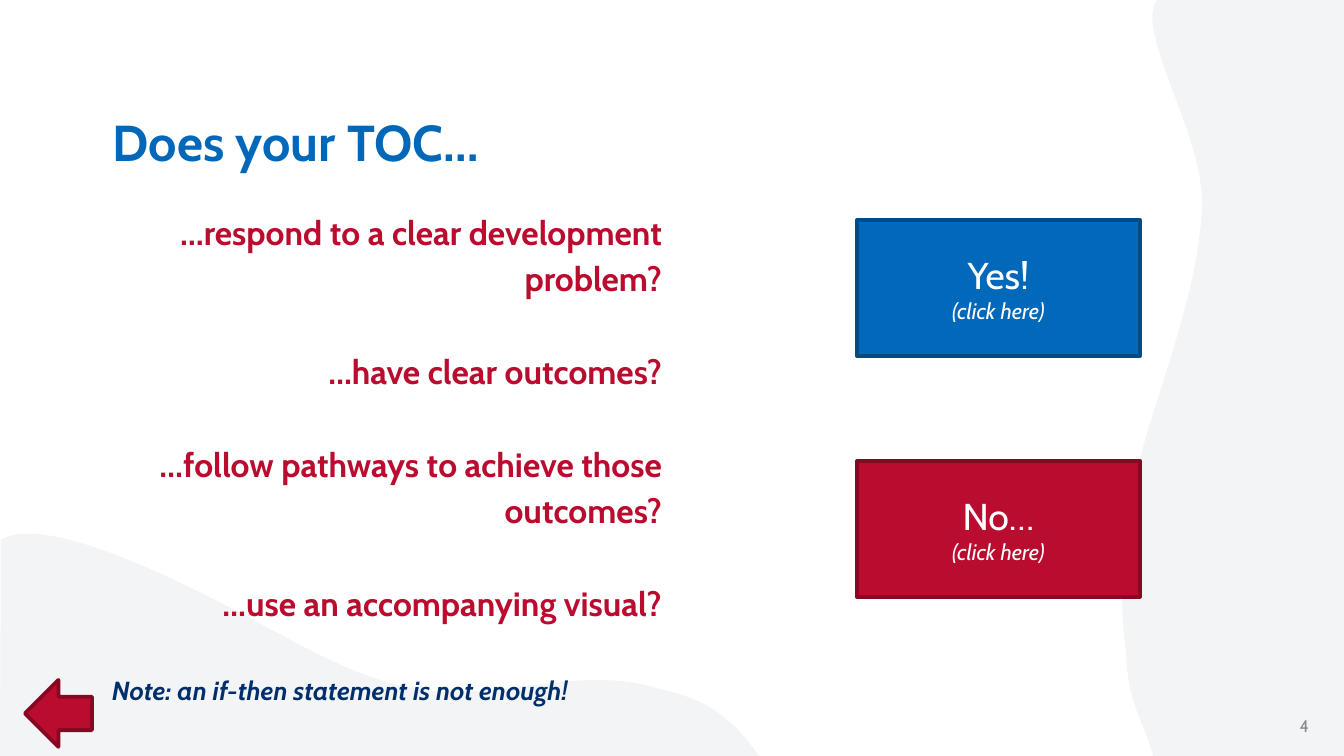
from lxml.etree import SubElement
from pptx import Presentation
from pptx.dml.color import RGBColor
from pptx.enum.shapes import MSO_SHAPE as Shape
from pptx.enum.text import MSO_ANCHOR as Anchor, PP_ALIGN as Align
from pptx.oxml.ns import qn
from pptx.util import Pt

SCALE = 914400 / 134.4  # EMU per px
FONT = "Cabin"
BLUE, RED, NAVY, WHITE, GREY = "0067B9", "BA0C2F", "002F6C", "FFFFFF", "888888"
PALE, DARK_RED = "F3F4F5", "870822"

# Content
TITLE = "Does your TOC…"
QUESTIONS = [
    "…respond to a clear development problem?",
    "…have clear outcomes?",
    "…follow pathways to achieve those outcomes?",
    "…use an accompanying visual?",
]
NOTE = "Note: an if-then statement is not enough!"
HINT = "(click here)"
BUTTONS = [("Yes!", "0268B9", "014B87"), ("No…", RED, DARK_RED)]
PAGE_NUMBER = "4"

# Background waves: start point, Bezier curves (two controls and an end), corners
WAVES = [
    ((1, 540),
     [((39, 516), (149, 566), (219, 602)),
      ((289, 637), (356, 683), (431, 691)),
      ((505, 698), (587, 665), (659, 689)),
      ((714, 700), (738, 726), (759, 756))],
     [(0, 756)]),
    ((1153, 756),
     [((1144, 720), (1128, 707), (1126, 652)),
      ((1116, 578), (1126, 503), (1149, 427)),
      ((1172, 352), (1200, 276), (1202, 204)),
      ((1203, 132), (1134, 31), (1157, 0))],
     [(1344, 0), (1344, 756)]),
]


def px(value):
    return round(value * SCALE)


def color(value):
    return RGBColor.from_string(value)


def add_wave(slide, start, curves, corners):
    builder = slide.shapes.build_freeform(*start, scale=SCALE)
    points = [point for curve in curves for point in curve]
    builder.add_line_segments(points + corners, close=True)
    wave = builder.convert_to_shape()
    style(wave, PALE)
    # Turn each three line segments into one Bezier curve
    segments = wave._element.xpath(".//a:lnTo")
    for first in range(0, len(points), 3):
        trio = segments[first:first + 3]
        outline = trio[0].getparent()
        bezier = SubElement(outline, qn("a:cubicBezTo"))
        trio[0].addprevious(bezier)
        for segment in trio:
            bezier.append(segment[0])
            outline.remove(segment)


def style(shape, fill, line=None):
    shape.shadow.inherit = False
    shape.fill.solid()
    shape.fill.fore_color.rgb = color(fill)
    if line:
        shape.line.color.rgb = color(line)
        shape.line.width = Pt(2)
    else:
        shape.line.fill.background()


def add_shape(slide, kind, box, fill, line):
    shape = slide.shapes.add_shape(kind, *map(px, box))
    style(shape, fill, line)
    return shape


def add_text_frame(slide, box):
    frame = slide.shapes.add_textbox(*map(px, box)).text_frame
    frame.word_wrap = True
    frame.margin_left = frame.margin_right = px(10)
    frame.margin_top = frame.margin_bottom = px(5)
    return frame


def add_paragraph(frame, text, size, fill, align=Align.LEFT, bold=False,
                  italic=False, spacing=None, before=0):
    first = frame.paragraphs[0]
    paragraph = frame.add_paragraph() if first.runs else first
    paragraph.alignment = align
    paragraph.space_before = Pt(before)
    if spacing:
        paragraph.line_spacing = spacing
    run = paragraph.add_run()
    run.text = text
    font = run.font
    font.name, font.size, font.bold, font.italic = FONT, Pt(size), bold, italic
    font.color.rgb = color(fill)


presentation = Presentation()
presentation.slide_width, presentation.slide_height = px(1344), px(756)
slide = presentation.slides.add_slide(presentation.slide_layouts[6])

# Background
for wave in WAVES:
    add_wave(slide, *wave)

# Title
title = add_text_frame(slide, (103, 101, 1159, 91))
add_paragraph(title, TITLE, 27, BLUE, bold=True, spacing=1.08)

# Questions and note, one empty line apart
body = add_text_frame(slide, (102, 201, 570, 520))
for index, question in enumerate(QUESTIONS):
    add_paragraph(body, question, 18, RED, Align.RIGHT, bold=True,
                  spacing=1.15, before=24.8 if index else 0)
add_paragraph(body, NOTE, 14, NAVY, bold=True, italic=True,
              spacing=1.15, before=24.8)

# Answer buttons
for index, (label, fill, line) in enumerate(BUTTONS):
    button = add_shape(slide, Shape.RECTANGLE,
                       (857, 220 + 241 * index, 283, 136), fill, line)
    frame = button.text_frame
    frame.word_wrap = True
    frame.vertical_anchor = Anchor.MIDDLE
    add_paragraph(frame, label, 20, WHITE, Align.CENTER)
    add_paragraph(frame, HINT, 12, WHITE, Align.CENTER, italic=True)

# Page number and back arrow
number = add_text_frame(slide, (1017, 711, 302, 40))
add_paragraph(number, PAGE_NUMBER, 9, GREY, Align.RIGHT)
add_shape(slide, Shape.LEFT_ARROW, (25, 680, 67, 67), RED, DARK_RED)

presentation.save("out.pptx")
